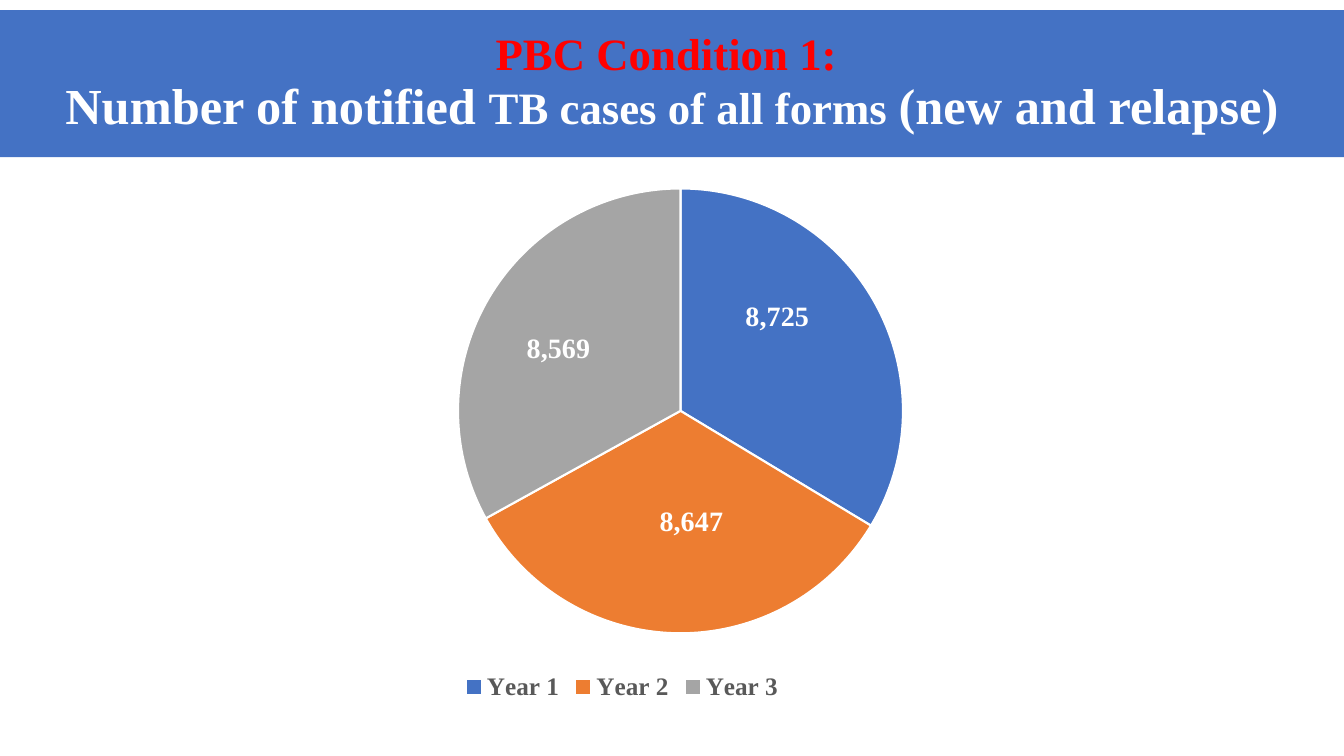
import lxml.etree
import pptx
import pptx.chart.data
import pptx.dml.color
import pptx.enum.chart
import pptx.enum.shapes
import pptx.enum.text
import pptx.oxml.ns
import pptx.util

PX = 9144
TITLE_FONT = "Times New Roman"
TITLE_LINES = [
    [("PBC Condition 1: ", 32, "FF0000")],
    [
        ("Number of notified ", 36, "FFFFFF"),
        ("TB cases of all forms ", 32, "FFFFFF"),
        ("(new and relapse)", 36, "FFFFFF"),
    ],
]
YEARS = [
    ("Year 1", 8725, "4472C4", (0, -0.07)),
    ("Year 2", 8647, "ED7D31", (0.01, 0)),
    ("Year 3", 8569, "A5A5A5", (-0.02, -0.01)),
]


def px(*lengths):
    return [pptx.util.Emu(length * PX) for length in lengths]


def colour(value):
    return pptx.dml.color.RGBColor.from_string(value)


def paint(fill, value):
    fill.solid()
    fill.fore_color.rgb = colour(value)


def style_font(font, size, value):
    font.name = TITLE_FONT
    font.size = pptx.util.Pt(size)
    font.bold = True
    font.color.rgb = colour(value)


def set_layout(parent, index, settings):
    qn = pptx.oxml.ns.qn
    for old in parent.findall(qn("c:layout")):
        parent.remove(old)
    layout = lxml.etree.Element(qn("c:layout"))
    manual = lxml.etree.SubElement(layout, qn("c:manualLayout"))
    for name, value in settings.items():
        lxml.etree.SubElement(manual, qn("c:" + name)).set("val", str(value))
    parent.insert(index, layout)


def add_title_band(page, left, top, width, height):
    box = page.shapes.add_shape(
        pptx.enum.shapes.MSO_SHAPE.RECTANGLE, *px(left, top, width, height)
    )
    box.shadow.inherit = False
    paint(box.fill, "4472C4")
    box.line.fill.background()
    frame = box.text_frame
    frame.word_wrap = True
    frame.vertical_anchor = pptx.enum.text.MSO_ANCHOR.MIDDLE
    para = frame.paragraphs[0]
    para.alignment = pptx.enum.text.PP_ALIGN.CENTER
    para.line_spacing = 0.9
    for number, line in enumerate(TITLE_LINES):
        if number:
            para.add_line_break()
        for text, size, value in line:
            span = para.add_run()
            span.text = text
            style_font(span.font, size, value)


def style_legend(chart):
    chart.has_legend = True
    legend = chart.legend
    legend.position = pptx.enum.chart.XL_LEGEND_POSITION.BOTTOM
    legend.include_in_layout = False
    style_font(legend.font, 18, "595959")
    set_layout(
        legend._element, 1, {"xMode": "edge", "yMode": "edge", "x": 0.33, "y": 0.89}
    )


def style_slices(series):
    for number, (_, _, value, (x, y)) in enumerate(YEARS):
        point = series.points[number]
        paint(point.format.fill, value)
        paint(point.format.line.fill, "FFFFFF")
        point.format.line.width = pptx.util.Pt(1.5)
        label = point.data_label
        style_font(label.font, 20, "FFFFFF")
        label.position = pptx.enum.chart.XL_LABEL_POSITION.CENTER
        tag = series.data_labels._element.findall(pptx.oxml.ns.qn("c:dLbl"))[number]
        set_layout(tag, 1, {"x": x, "y": y})


def add_pie(page, left, top, width, height):
    cases = pptx.chart.data.CategoryChartData(number_format="#,##0")
    cases.categories = [year[0] for year in YEARS]
    cases.add_series("Series 1", [year[1] for year in YEARS])
    chart = page.shapes.add_chart(
        pptx.enum.chart.XL_CHART_TYPE.PIE, *px(left, top, width, height), cases
    ).chart
    chart.has_title = False
    chart.font.name = "Calibri"
    chart.font.size = pptx.util.Pt(10)
    chart.font.color.rgb = colour("000000")
    plot = chart.plots[0]
    plot.vary_by_categories = True
    series = plot.series[0]
    labels = series.data_labels
    labels.show_value = True
    labels.number_format = "#,##0"
    labels.number_format_is_linked = False
    labels.position = pptx.enum.chart.XL_LABEL_POSITION.CENTER
    style_font(labels.font, 20, "FFFFFF")
    style_slices(series)
    style_legend(chart)
    area = chart._chartSpace.chart.plotArea
    set_layout(
        area,
        0,
        {
            "layoutTarget": "inner",
            "xMode": "edge",
            "yMode": "edge",
            "x": 0.33,
            "y": 0.03,
            "w": 0.34,
            "h": 0.8,
        },
    )


def main():
    deck = pptx.Presentation()
    deck.slide_width, deck.slide_height = px(1333, 750)
    page = deck.slides.add_slide(deck.slide_layouts[6])
    add_title_band(page, 0, 10, 1333, 146)
    add_pie(page, 26, 169, 1298, 555)
    deck.save("out.pptx")


if __name__ == "__main__":
    main()
